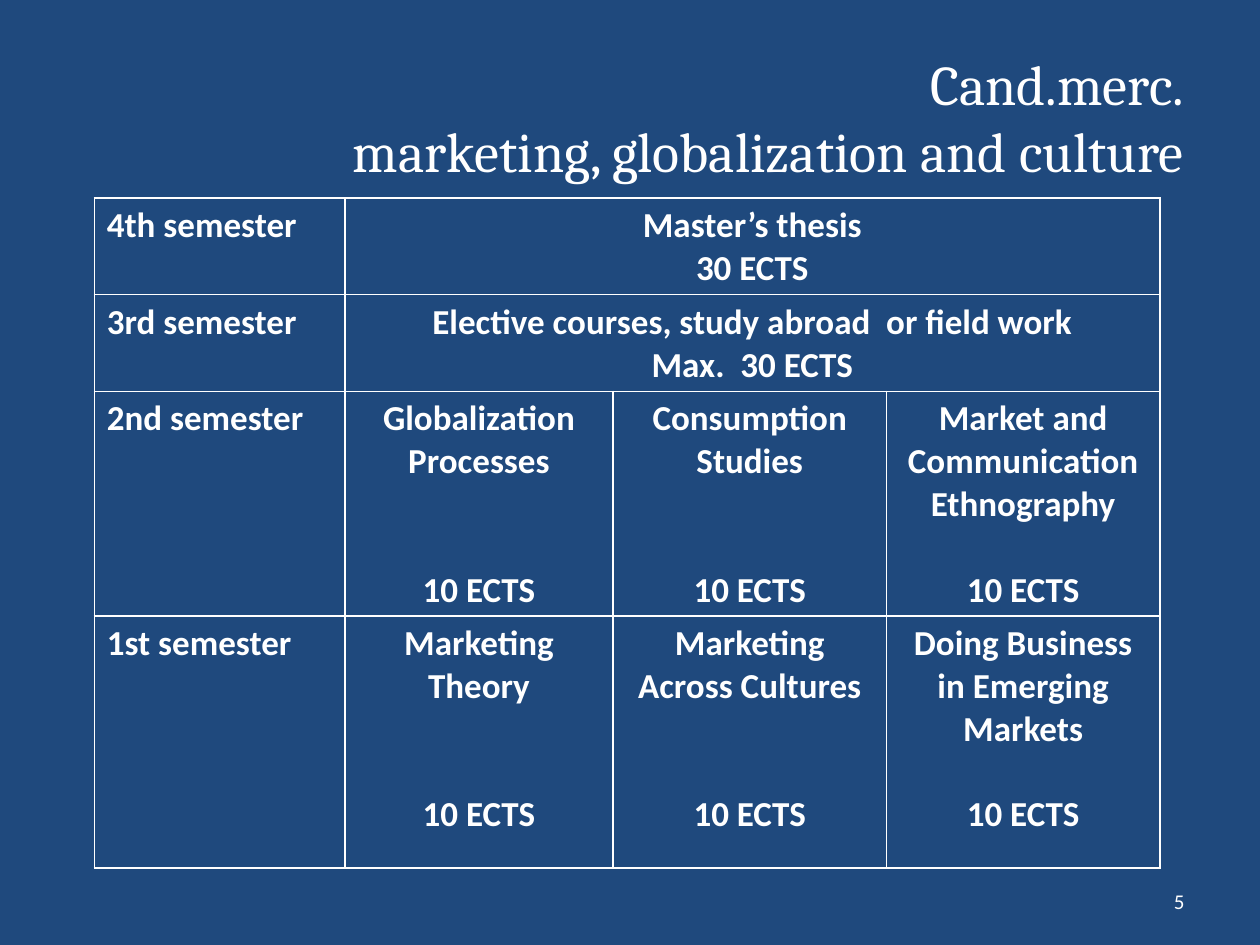
from dataclasses import dataclass

from lxml import etree
from pptx import Presentation
from pptx import util as u
from pptx.dml.color import RGBColor
from pptx.enum import text
from pptx.oxml.ns import qn


@dataclass(frozen=True)
class Theme:
    back: str = "1F497D"
    ink: str = "FFFFFF"
    head_font: str = "Cambria"
    body_font: str = "Calibri"
    title: int = 32
    body: int = 20
    number: int = 12
    line: float = 24.5  # height of one body line, in points
    border: float = 1


THEME = Theme()
LEFT, CENTER, RIGHT = text.PP_ALIGN.LEFT, text.PP_ALIGN.CENTER, text.PP_ALIGN.RIGHT

COLUMNS = [5.05, 5.41, 5.51, 5.51]
ROW_HEIGHTS = [1.9, 1.9, 4.42, 5.08]
# Each course: name, credits, and the empty lines between them
SEMESTERS = [
    ("4th semester", [("Master’s thesis", "30 ECTS", 0)]),
    ("3rd semester", [("Elective courses, study abroad  or field work",
                       "Max.  30 ECTS", 0)]),
    ("2nd semester", [("Globalization Processes", "10 ECTS", 2),
                      ("Consumption Studies", "10 ECTS", 2),
                      ("Market and Communication Ethnography", "10 ECTS", 1)]),
    ("1st semester", [("Marketing Theory", "10 ECTS", 2),
                      ("Marketing Across Cultures", "10 ECTS", 2),
                      ("Doing Business in Emerging Markets", "10 ECTS", 1)]),
]


def place(sp, box):
    sp.left, sp.top, sp.width, sp.height = (u.Cm(v) for v in box)


def style(p, size, font, align, bold=False):
    p.alignment = align
    for r in p.runs:
        r.font.size, r.font.name, r.font.bold = u.Pt(size), font, bold
        r.font.color.rgb = RGBColor.from_string(THEME.ink)


def add_title(s, box, title):
    sp = s.shapes.title
    place(sp, box)
    tf = sp.text_frame
    tf.text = title
    tf.auto_size = text.MSO_AUTO_SIZE.NONE
    tf.vertical_anchor = text.MSO_ANCHOR.MIDDLE
    style(tf.paragraphs[0], THEME.title, THEME.head_font, RIGHT)


def add_number(s, box, number):
    tf = s.shapes.add_textbox(*(u.Cm(v) for v in box)).text_frame
    tf.word_wrap = True
    tf.vertical_anchor = text.MSO_ANCHOR.MIDDLE
    tf.text = number
    style(tf.paragraphs[0], THEME.number, THEME.body_font, RIGHT)


def set_borders(cell):
    tc_pr = cell._tc.get_or_add_tcPr()
    for side in ("lnL", "lnR", "lnT", "lnB"):
        ln = etree.SubElement(tc_pr, qn(f"a:{side}"), w=str(u.Pt(THEME.border)))
        fill = etree.SubElement(ln, qn("a:solidFill"))
        etree.SubElement(fill, qn("a:srgbClr"), val=THEME.ink)


def fill_cell(cell, lines, align, gap=0):
    tf = cell.text_frame
    tf.text = "\n".join(lines)
    for p in tf.paragraphs:
        style(p, THEME.body, THEME.body_font, align, bold=True)
    if gap:
        tf.paragraphs[-1].space_before = u.Pt(gap * THEME.line)


def add_programme(s, box):
    frame = s.shapes.add_table(len(SEMESTERS), len(COLUMNS), *(u.Cm(v) for v in box))
    table = frame.table
    table.first_row = table.horz_banding = False
    for column, width in zip(table.columns, COLUMNS):
        column.width = u.Cm(width)
    for row, height in zip(table.rows, ROW_HEIGHTS):
        row.height = u.Cm(height)
    for cell in table.iter_cells():
        set_borders(cell)
        cell.fill.background()

    for i, (semester, courses) in enumerate(SEMESTERS):
        fill_cell(table.cell(i, 0), [semester], LEFT)
        # A single course spans the whole semester
        if len(courses) == 1:
            table.cell(i, 1).merge(table.cell(i, len(COLUMNS) - 1))
        for j, (name, credits, gap) in enumerate(courses, start=1):
            fill_cell(table.cell(i, j), [name, credits], CENTER, gap)


def main():
    prs = Presentation()
    prs.slide_width, prs.slide_height = u.Cm(25.4), u.Cm(19.05)
    s = prs.slides.add_slide(prs.slide_layouts[5])
    s.background.fill.solid()
    s.background.fill.fore_color.rgb = RGBColor.from_string(THEME.back)

    add_title(s, (1.27, 0.76, 22.86, 3.18),
              "Cand.merc.\vmarketing, globalization and culture")
    add_number(s, (18.2, 17.65, 5.93, 1.02), "5")
    add_programme(s, (1.9, 3.99, sum(COLUMNS), sum(ROW_HEIGHTS)))
    prs.save("out.pptx")


if __name__ == "__main__":
    main()
